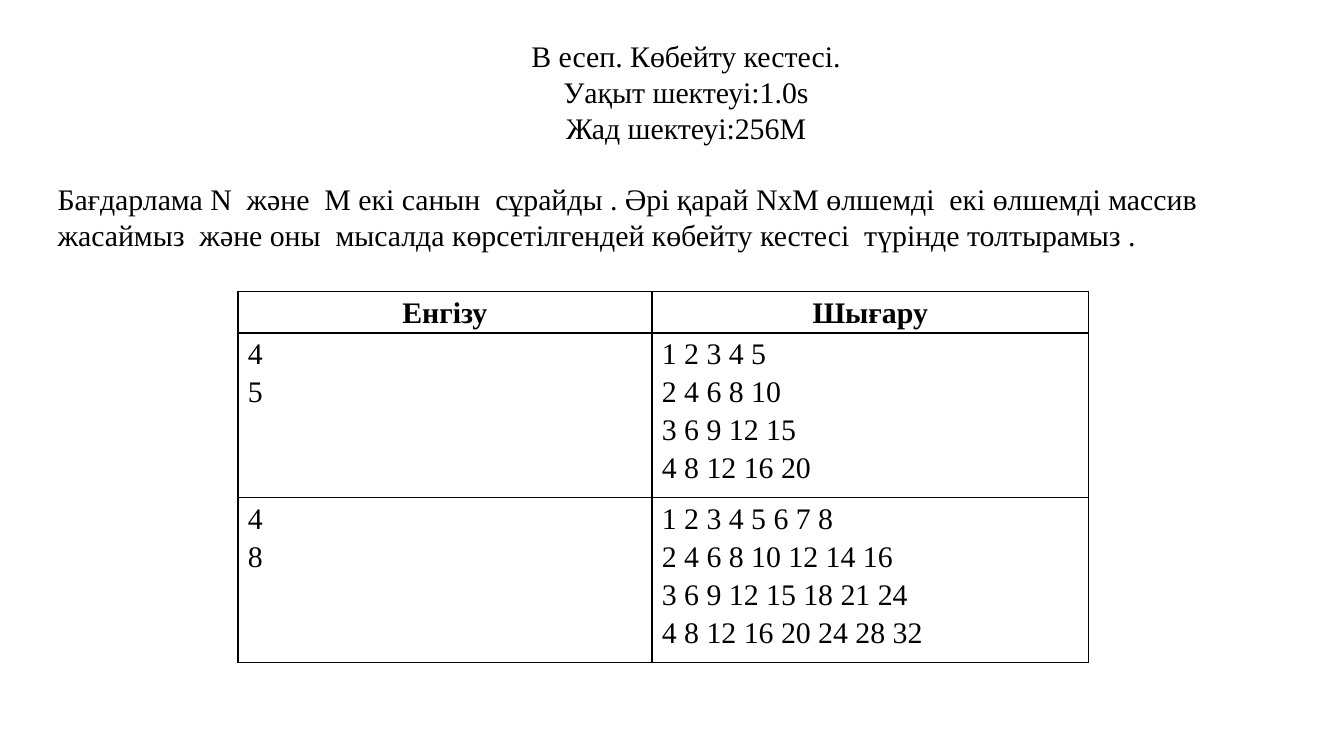
from dataclasses import dataclass

from lxml import etree
from pptx import Presentation
from pptx.dml.color import RGBColor
from pptx.enum.text import MSO_ANCHOR, MSO_AUTO_SIZE, PP_ALIGN
from pptx.oxml.ns import qn
from pptx.util import Emu, Pt

LEFT, CENTER = PP_ALIGN.LEFT, PP_ALIGN.CENTER
TOP = MSO_ANCHOR.TOP
NO_AUTOFIT = MSO_AUTO_SIZE.NONE
TITLE_ONLY = 5
EMU_PER_PX = 4572  # 200 px to the inch


@dataclass(frozen=True)
class Theme:
    font: str = "Times New Roman"
    size: int = 16
    ink: str = "000000"
    border_width: int = 1
    table_spacing: float = 1.15


THEME = Theme()

HEADING = ["В есеп. Көбейту кестесі.", "Уақыт шектеуі:1.0s", "Жад шектеуі:256M"]
STATEMENT = (
    "Бағдарлама N  және  M екі санын  сұрайды . Әрі қарай NxM өлшемді  екі өлшемді массив "
    "жасаймыз  және оны  мысалда көрсетілгендей көбейту кестесі  түрінде толтырамыз ."
)
TABLE_HEADERS = ["Енгізу", "Шығару"]
EXAMPLES = [(4, 5), (4, 8)]
COLUMN_WIDTHS = [616, 650]
ROW_HEIGHTS = [61, 245, 245]


def px(length):
    return Emu(length * EMU_PER_PX)


def write_text(text_frame, lines, align=LEFT, bold=False, line_spacing=1.0):
    """Fill a text frame with one paragraph per line."""
    text_frame.text = "\n".join(lines)
    text_frame.word_wrap = True
    for paragraph in text_frame.paragraphs:
        paragraph.alignment = align
        paragraph.line_spacing = line_spacing
        font = paragraph.runs[0].font
        font.name = THEME.font
        font.size = Pt(THEME.size)
        font.bold = bold
        font.color.rgb = RGBColor.from_string(THEME.ink)


def add_heading(slide, lines, left, top, width, height):
    title = slide.shapes.title
    title.left, title.top, title.width, title.height = map(px, (left, top, width, height))
    write_text(title.text_frame, lines, align=CENTER)
    title.text_frame.auto_size = NO_AUTOFIT
    title.text_frame.vertical_anchor = TOP


def add_statement(slide, text, left, top, width, height):
    box = slide.shapes.add_textbox(px(left), px(top), px(width), px(height))
    write_text(box.text_frame, [text])


def set_borders(cell):
    """Draw a solid line on all four sides of a cell."""
    properties = cell._tc.get_or_add_tcPr()
    for side in ("a:lnL", "a:lnR", "a:lnT", "a:lnB"):
        line = etree.SubElement(properties, qn(side), w=str(Pt(THEME.border_width)))
        fill = etree.SubElement(line, qn("a:solidFill"))
        etree.SubElement(fill, qn("a:srgbClr"), val=THEME.ink)


def format_cell(cell, lines, **text_format):
    cell.margin_left = cell.margin_right = px(15)
    cell.margin_top = cell.margin_bottom = 0
    set_borders(cell)
    cell.fill.background()
    write_text(cell.text_frame, lines, line_spacing=THEME.table_spacing, **text_format)


def multiplication_rows(row_count, column_count):
    return [
        " ".join(str(row * column) for column in range(1, column_count + 1))
        for row in range(1, row_count + 1)
    ]


def add_examples_table(slide, left, top):
    frame = slide.shapes.add_table(
        len(ROW_HEIGHTS), len(COLUMN_WIDTHS),
        px(left), px(top), px(sum(COLUMN_WIDTHS)), px(sum(ROW_HEIGHTS)),
    )
    table = frame.table
    table.first_row = table.horz_banding = False
    for column, width in zip(table.columns, COLUMN_WIDTHS):
        column.width = px(width)
    for row, height in zip(table.rows, ROW_HEIGHTS):
        row.height = px(height)

    # Header row
    for column_index, header in enumerate(TABLE_HEADERS):
        format_cell(table.cell(0, column_index), [header], align=CENTER, bold=True)

    # Input numbers beside the resulting multiplication table
    for row_index, example in enumerate(EXAMPLES, start=1):
        format_cell(table.cell(row_index, 0), [str(number) for number in example])
        format_cell(table.cell(row_index, 1), multiplication_rows(*example))


def main():
    presentation = Presentation()
    presentation.slide_width, presentation.slide_height = px(2000), px(1125)
    slide = presentation.slides.add_slide(presentation.slide_layouts[TITLE_ONLY])

    add_heading(slide, HEADING, left=66, top=46, width=1910, height=190)
    add_statement(slide, STATEMENT, left=66, top=259, width=1910, height=130)
    add_examples_table(slide, left=354, top=434)

    presentation.save("out.pptx")


if __name__ == "__main__":
    main()
